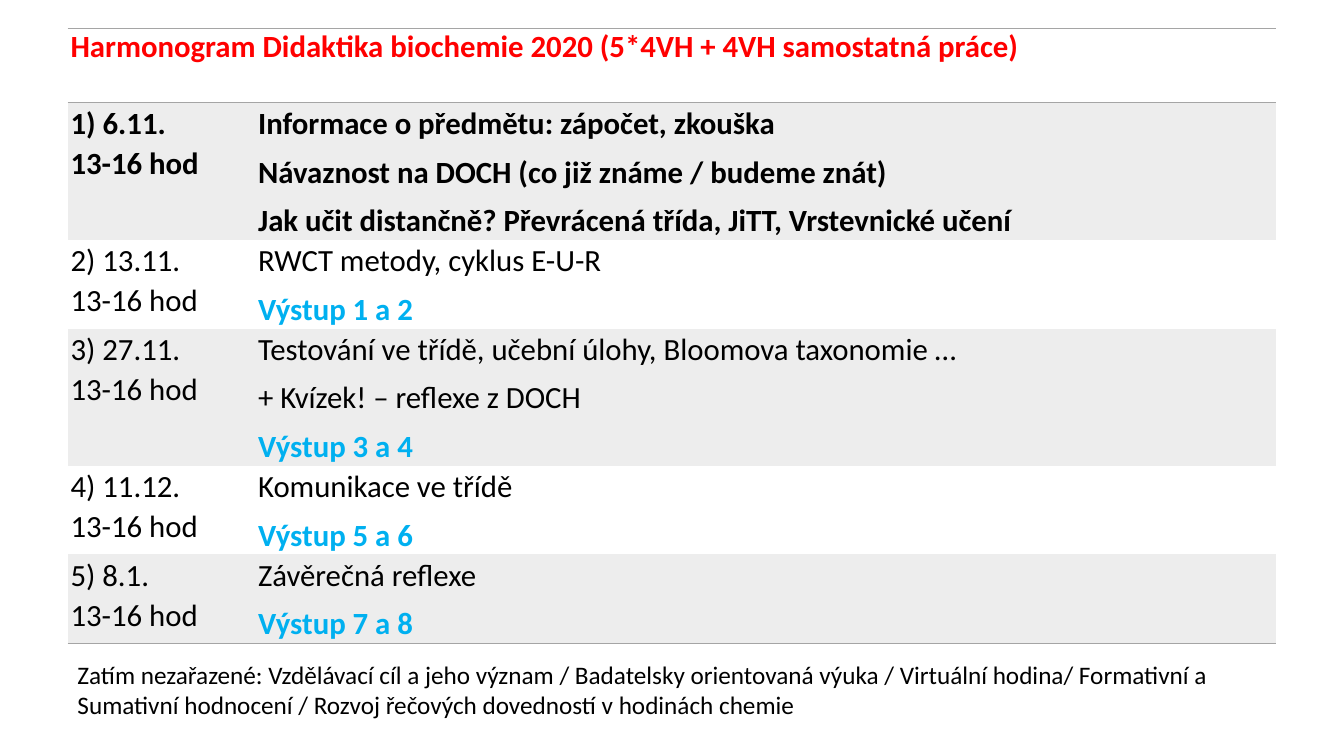
from lxml.etree import SubElement
from pptx import Presentation
from pptx.dml.color import RGBColor as Rgb
from pptx.enum.text import MSO_AUTO_SIZE as AutoSize
from pptx.oxml.ns import qn
from pptx.util import Inches, Pt

COLORS = {
    "title": "FF0000",
    "text": "000000",
    "output": "00B0F0",
    "line": "A5A5A5",
    "band": "EDEDED",
}
FONT = "Calibri"
PLAIN_STYLE = "{2D5ABB26-0587-4C30-8999-92F81FD0307C}"
COLUMN_WIDTHS = [1.86, 9.08, 1.05]
TITLE_HEIGHT = 0.74
ROW_HEIGHTS = {2: 0.88, 3: 1.36}
TITLE = "Harmonogram Didaktika biochemie 2020 (5*4VH + 4VH samostatná práce)"
HOURS = "13-16 hod"
OUTPUT = "Výstup"
LESSONS = [
    ("1) 6.11.", ["Informace o předmětu: zápočet, zkouška",
                  "Návaznost na DOCH (co již známe / budeme znát)",
                  "Jak učit distančně? Převrácená třída, JiTT, Vrstevnické učení"]),
    ("2) 13.11.", ["RWCT metody, cyklus E-U-R", "Výstup 1 a 2"]),
    ("3) 27.11.", ["Testování ve třídě, učební úlohy, Bloomova taxonomie …",
                   "+ Kvízek! – reflexe z DOCH", "Výstup 3 a 4"]),
    ("4) 11.12.", ["Komunikace ve třídě", "Výstup 5 a 6"]),
    ("5) 8.1.", ["Závěrečná reflexe", "Výstup 7 a 8"]),
]
UNASSIGNED = (
    "Zatím nezařazené: Vzdělávací cíl a jeho význam / Badatelsky orientovaná výuka / "
    "Virtuální hodina/ Formativní a Sumativní hodnocení / "
    "Rozvoj řečových dovedností v hodinách chemie"
)


def style_paragraph(para, size, color, bold=False):
    for span in para.runs:
        span.font.name = FONT
        span.font.size = Pt(size)
        span.font.bold = bold
        span.font.color.rgb = Rgb.from_string(COLORS[color])


def add_border(cell, side):
    line = SubElement(cell._tc.get_or_add_tcPr(), qn(f"a:{side}"), w=str(Pt(1)))
    fill = SubElement(line, qn("a:solidFill"))
    SubElement(fill, qn("a:srgbClr"), val=COLORS["line"])


def prepare_cell(cell, borders=(), banded=False):
    cell.margin_left = cell.margin_right = Inches(0.03)
    cell.margin_top = cell.margin_bottom = 0
    for side in borders:
        add_border(cell, side)
    if banded:
        cell.fill.solid()
        cell.fill.fore_color.rgb = Rgb.from_string(COLORS["band"])
    else:
        cell.fill.background()


def fill_lesson_cell(cell, lines, bold, space_after=0):
    cell.text_frame.text = "\n".join(lines)
    for para in cell.text_frame.paragraphs:
        is_output = para.text.startswith(OUTPUT)
        para.line_spacing = 1.07
        para.space_after = Pt(space_after)
        style_paragraph(para, 22, "output" if is_output else "text", bold or is_output)


def add_schedule(page, left, top, width):
    heights = [TITLE_HEIGHT] + [ROW_HEIGHTS[len(topics)] for _, topics in LESSONS]
    frame = page.shapes.add_table(
        len(heights), len(COLUMN_WIDTHS),
        Inches(left), Inches(top), Inches(width), Inches(sum(heights)))
    table = frame.table
    table.first_row = table.horz_banding = False
    table._tbl.tblPr.find(qn("a:tableStyleId")).text = PLAIN_STYLE
    for column, column_width in zip(table.columns, COLUMN_WIDTHS):
        column.width = Inches(column_width)
    for row, height in zip(table.rows, heights):
        row.height = Inches(height)

    for cell in table.rows[0].cells:
        prepare_cell(cell, ("lnT", "lnB"))
    title = table.cell(0, 0)
    title.merge(table.cell(0, len(COLUMN_WIDTHS) - 1))
    title.text_frame.text = TITLE
    style_paragraph(title.text_frame.paragraphs[0], 22, "title", True)

    for number, (date, topics) in enumerate(LESSONS, 1):
        borders = ("lnB",) if number == len(LESSONS) else ()
        for cell in table.rows[number].cells:
            prepare_cell(cell, borders, banded=number % 2 == 1)
        bold = number == 1
        fill_lesson_cell(table.cell(number, 0), [date, HOURS], bold)
        fill_lesson_cell(table.cell(number, 1), topics, bold, 6)


def add_unassigned(page, left, top, width, height):
    box = page.shapes.add_textbox(Inches(left), Inches(top), Inches(width), Inches(height))
    box.text_frame.word_wrap = True
    box.text_frame.auto_size = AutoSize.SHAPE_TO_FIT_TEXT
    box.text_frame.text = UNASSIGNED
    style_paragraph(box.text_frame.paragraphs[0], 18, "text")


def main():
    deck = Presentation()
    deck.slide_width, deck.slide_height = Inches(13.33), Inches(7.5)
    page = deck.slides.add_slide(deck.slide_layouts[6])
    add_schedule(page, 0.67, 0.28, sum(COLUMN_WIDTHS))
    add_unassigned(page, 0.67, 6.49, sum(COLUMN_WIDTHS), 0.71)
    deck.save("out.pptx")


if __name__ == "__main__":
    main()
